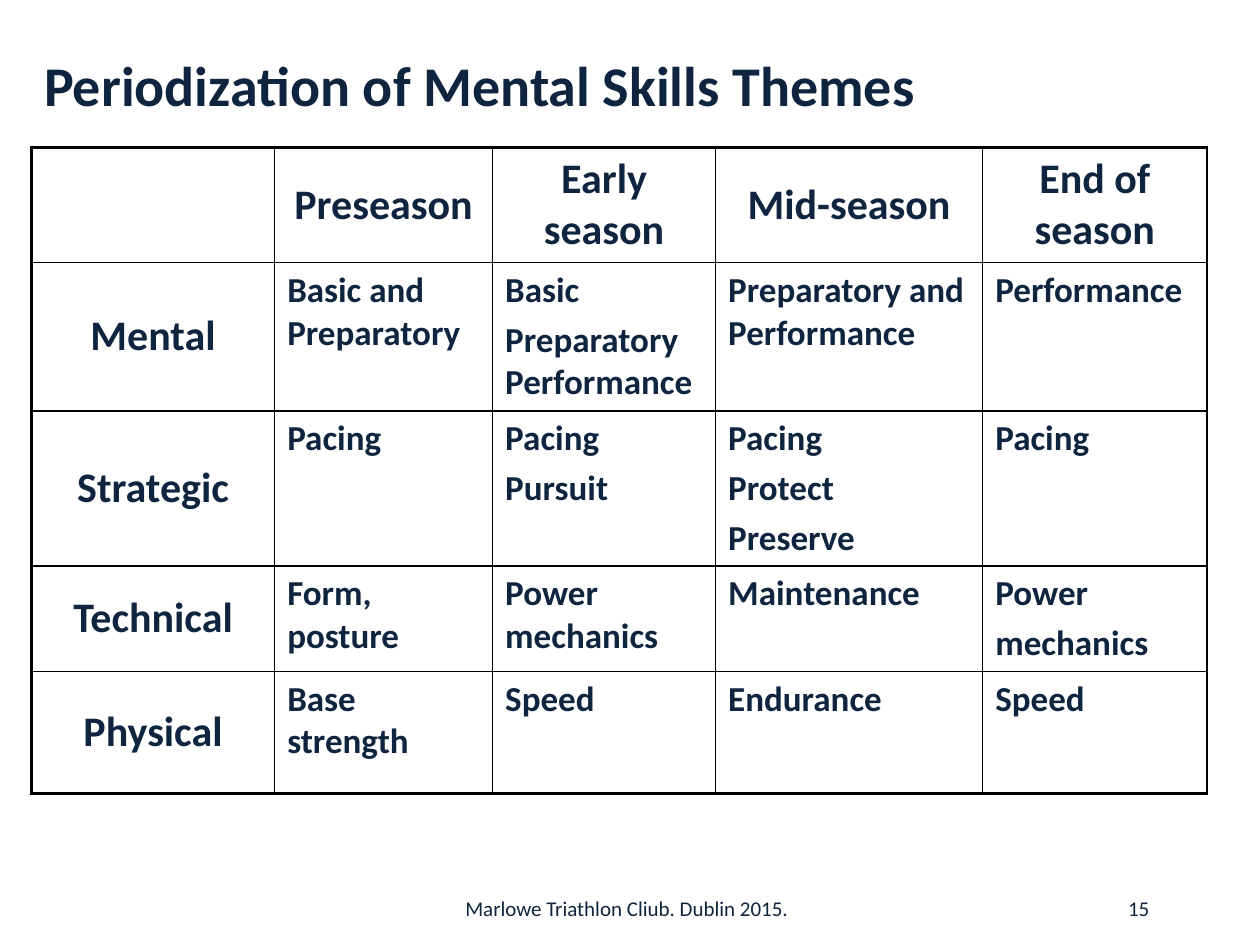
from lxml import etree
from pptx import Presentation
from pptx.dml.color import RGBColor
from pptx.enum import text
from pptx.oxml.ns import qn
from pptx.util import Inches, Pt

NAVY = "0F243E"
BLACK = "000000"
THIN, THICK = 1, 2.25


def format_paragraph(paragraph, size, alignment, bold=True, space=0):
    paragraph.alignment = alignment
    paragraph.space_before = Pt(space)
    values = {"name": "Calibri", "size": Pt(size), "bold": bold}
    for name, value in values.items():
        setattr(paragraph.font, name, value)
    paragraph.font.color.rgb = RGBColor.from_string(NAVY)


def add_border(cell, side, width):
    properties = cell._tc.get_or_add_tcPr()
    line = etree.SubElement(properties, qn("a:ln" + side), w=str(int(Pt(width))))
    fill = etree.SubElement(line, qn("a:solidFill"))
    etree.SubElement(fill, qn("a:srgbClr"), val=BLACK)


presentation = Presentation()
presentation.slide_width = Inches(10)
presentation.slide_height = Inches(7.5)
slide = presentation.slides.add_slide(presentation.slide_layouts[5])

# Title
title = slide.shapes.title
place = {"left": 0.25, "top": 0.17, "width": 8.58, "height": 1}
for name, value in place.items():
    setattr(title, name, Inches(value))
title.text_frame.text = "Periodization of Mental Skills Themes"
title.text_frame.vertical_anchor = text.MSO_ANCHOR.MIDDLE
format_paragraph(title.text_frame.paragraphs[0], 32, text.PP_ALIGN.LEFT)

# Table of themes by season; a line break starts a new paragraph
themes = [
    ["", "Preseason", "Early season", "Mid-season", "End of season"],
    ["Mental", "Basic and Preparatory", "Basic\nPreparatory Performance",
     "Preparatory and Performance", "Performance"],
    ["Strategic", "Pacing", "Pacing\nPursuit", "Pacing\nProtect\nPreserve", "Pacing"],
    ["Technical", "Form, posture", "Power mechanics", "Maintenance", "Power\nmechanics"],
    ["Physical", "Base strength", "Speed", "Endurance", "Speed"],
]
column_widths = [1.93, 1.73, 1.77, 2.12, 1.78]
row_heights = [0.85, 1, 1.05, 0.71, 0.97]
table = slide.shapes.add_table(
    len(row_heights), len(column_widths), Inches(0.25), Inches(1.17),
    Inches(sum(column_widths)), Inches(sum(row_heights))).table
table.first_row = False
table.horz_banding = False
for column, width in zip(table.columns, column_widths):
    column.width = Inches(width)
for row, height in zip(table.rows, row_heights):
    row.height = Inches(height)

last_row = len(themes) - 1
for row_index, row_themes in enumerate(themes):
    for column_index, theme in enumerate(row_themes):
        cell = table.cell(row_index, column_index)
        heading = row_index == 0 or column_index == 0
        size = 24 if heading else 20
        alignment = text.PP_ALIGN.CENTER if heading else text.PP_ALIGN.LEFT
        cell.text = theme
        cell.vertical_anchor = text.MSO_ANCHOR.MIDDLE if heading else text.MSO_ANCHOR.TOP
        for paragraph in cell.text_frame.paragraphs:
            format_paragraph(paragraph, size, alignment, space=0.2 * size)
        # Thick outer lines on the left, top and bottom
        add_border(cell, "L", THICK if column_index == 0 else THIN)
        add_border(cell, "R", THIN)
        add_border(cell, "T", THICK if row_index == 0 else THIN)
        add_border(cell, "B", THICK if row_index == last_row else THIN)
        cell.fill.background()

# Footer and slide number
footers = [
    ("Marlowe Triathlon Cliub. Dublin 2015.", 3.39, 3.17, text.PP_ALIGN.CENTER),
    ("15", 7.14, 2.08, text.PP_ALIGN.RIGHT),
]
for words, left, width, alignment in footers:
    box = slide.shapes.add_textbox(Inches(left), Inches(6.96), Inches(width), Inches(0.5))
    frame = box.text_frame
    frame.word_wrap = True
    frame.vertical_anchor = text.MSO_ANCHOR.MIDDLE
    frame.text = words
    format_paragraph(frame.paragraphs[0], 12, alignment, bold=False)

presentation.save("out.pptx")
